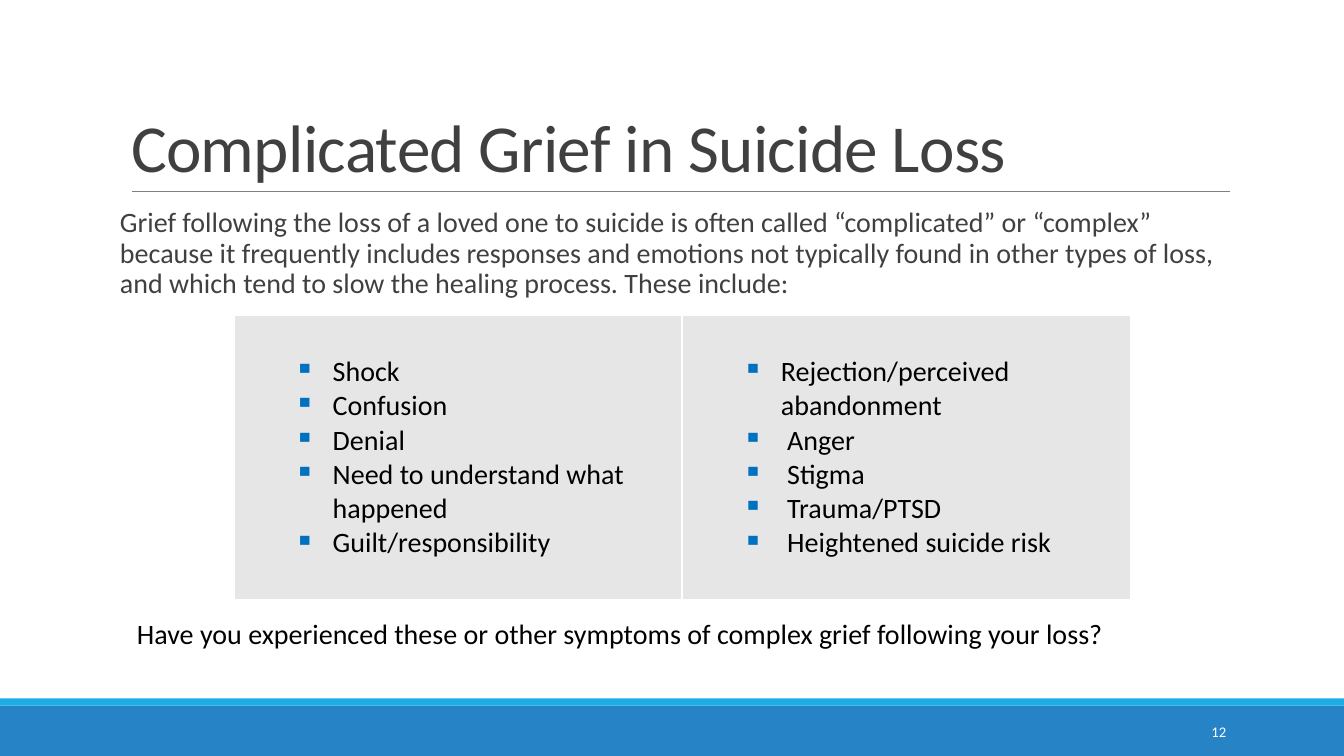
from lxml import etree
from pptx import Presentation
from pptx.dml.color import RGBColor
from pptx.enum import shapes, text
from pptx.oxml.ns import qn
from pptx.util import Inches, Pt

WIDTH, HEIGHT = 13.33, 7.5
INTRO = (
    "Grief following the loss of a loved one to suicide is often called “complicated” or “complex” "
    "because it frequently includes responses and emotions not typically found in other types of loss, "
    "and which tend to slow the healing process. These include:"
)
QUESTION = "Have you experienced these or other symptoms of complex grief following your loss?"
RESPONSES = [
    ["Shock", "Confusion", "Denial", "Need to understand what happened", "Guilt/responsibility"],
    ["Rejection/perceived abandonment", " Anger", " Stigma", " Trauma/PTSD", " Heightened suicide risk"],
]


def color(value):
    """Turn a hex string into a colour."""
    return RGBColor.from_string(value)


def format_runs(paragraph, size, value):
    """Set the font of every run in a paragraph."""
    for run in paragraph.runs:
        run.font.name = "Calibri"
        run.font.size = Pt(size)
        run.font.bold = False
        run.font.color.rgb = color(value)


def place(shape, box):
    """Move a shape into a box of inches."""
    shape.left, shape.top, shape.width, shape.height = map(Inches, box)


def add_bar(slide, box, fill):
    """Add a plain filled bar."""
    bar = slide.shapes.add_shape(shapes.MSO_SHAPE.RECTANGLE, *map(Inches, box))
    bar.shadow.inherit = False
    bar.fill.solid()
    bar.fill.fore_color.rgb = color(fill)
    bar.line.fill.background()


def add_text(slide, box, words, size, value):
    """Add a wrapped text box and return its frame."""
    frame = slide.shapes.add_textbox(*map(Inches, box)).text_frame
    frame.word_wrap = True
    frame.text = words
    format_runs(frame.paragraphs[0], size, value)
    return frame


def add_footer(slide, box, number):
    """Add the two-tone footer with the slide number."""
    left, top, width, height = box
    strip = 0.07
    add_bar(slide, (left, top + strip, width, height - strip), "2683C6")
    add_bar(slide, (left, top, width, strip), "1CADE4")
    frame = add_text(slide, (left + width - 2.5, top + 0.13, 1.43, 0.4), number, 10.5, "FFFFFF")
    frame.vertical_anchor = text.MSO_ANCHOR.MIDDLE
    frame.paragraphs[0].alignment = text.PP_ALIGN.RIGHT


def add_title(slide, box, words):
    """Fill the title placeholder and underline it."""
    left, top, width, height = box
    title = slide.shapes.title
    place(title, box)
    frame = title.text_frame
    frame.text = words
    frame.auto_size = text.MSO_AUTO_SIZE.NONE
    frame.vertical_anchor = text.MSO_ANCHOR.BOTTOM
    paragraph = frame.paragraphs[0]
    paragraph.alignment = text.PP_ALIGN.LEFT
    paragraph.line_spacing = 0.85
    format_runs(paragraph, 48, "404040")
    paragraph.runs[0].font._element.set("spc", "-50")

    bottom = Inches(top + height)
    rule = slide.shapes.add_connector(
        shapes.MSO_CONNECTOR.STRAIGHT, Inches(left + 0.11), bottom, Inches(left + width), bottom
    )
    rule.line.color.rgb = color("808080")
    rule.line.width = Pt(0.5)
    etree.SubElement(rule._element.spPr, qn("a:effectLst"))


def add_intro(slide, box):
    """Add the introductory paragraph."""
    frame = add_text(slide, box, INTRO, 20, "404040")
    frame.margin_left = frame.margin_right = 0
    frame.paragraphs[0].line_spacing = 0.9


def add_bullet(paragraph):
    """Give a paragraph a hanging blue square bullet."""
    properties = paragraph._p.get_or_add_pPr()
    properties.set("marL", str(Inches(0.88)))
    properties.set("indent", str(Inches(-0.38)))
    bullet_color = etree.SubElement(properties, qn("a:buClr"))
    etree.SubElement(bullet_color, qn("a:srgbClr"), val="0070C0")
    etree.SubElement(properties, qn("a:buChar"), char="▪")


def add_responses(slide, box):
    """Add the table with one bulleted list per column."""
    table = slide.shapes.add_table(1, len(RESPONSES), *map(Inches, box)).table
    table.first_row = table.horz_banding = False
    for cell, responses in zip(table.rows[0].cells, RESPONSES):
        cell.fill.solid()
        cell.fill.fore_color.rgb = color("E6E6E6")
        cell.margin_top = Inches(0.39)
        cell.text_frame.text = "\n".join(responses)
        for paragraph in cell.text_frame.paragraphs:
            add_bullet(paragraph)
            format_runs(paragraph, 20, "000000")


def main():
    """Build and save the slide."""
    presentation = Presentation()
    presentation.slide_width = Inches(WIDTH)
    presentation.slide_height = Inches(HEIGHT)
    slide = presentation.slides.add_slide(presentation.slide_layouts[5])
    add_footer(slide, (0, 6.93, WIDTH, HEIGHT - 6.93), "12")
    add_title(slide, (1.2, 0.31, 11, 1.59), "Complicated Grief in Suicide Loss")
    add_intro(slide, (1.19, 2.02, 11, 1.05))
    add_responses(slide, (2.32, 3.13, 8.89, 2.82))
    add_text(slide, (1.26, 6.07, 11, 0.44), QUESTION, 20, "000000")
    presentation.save("out.pptx")


if __name__ == "__main__":
    main()
